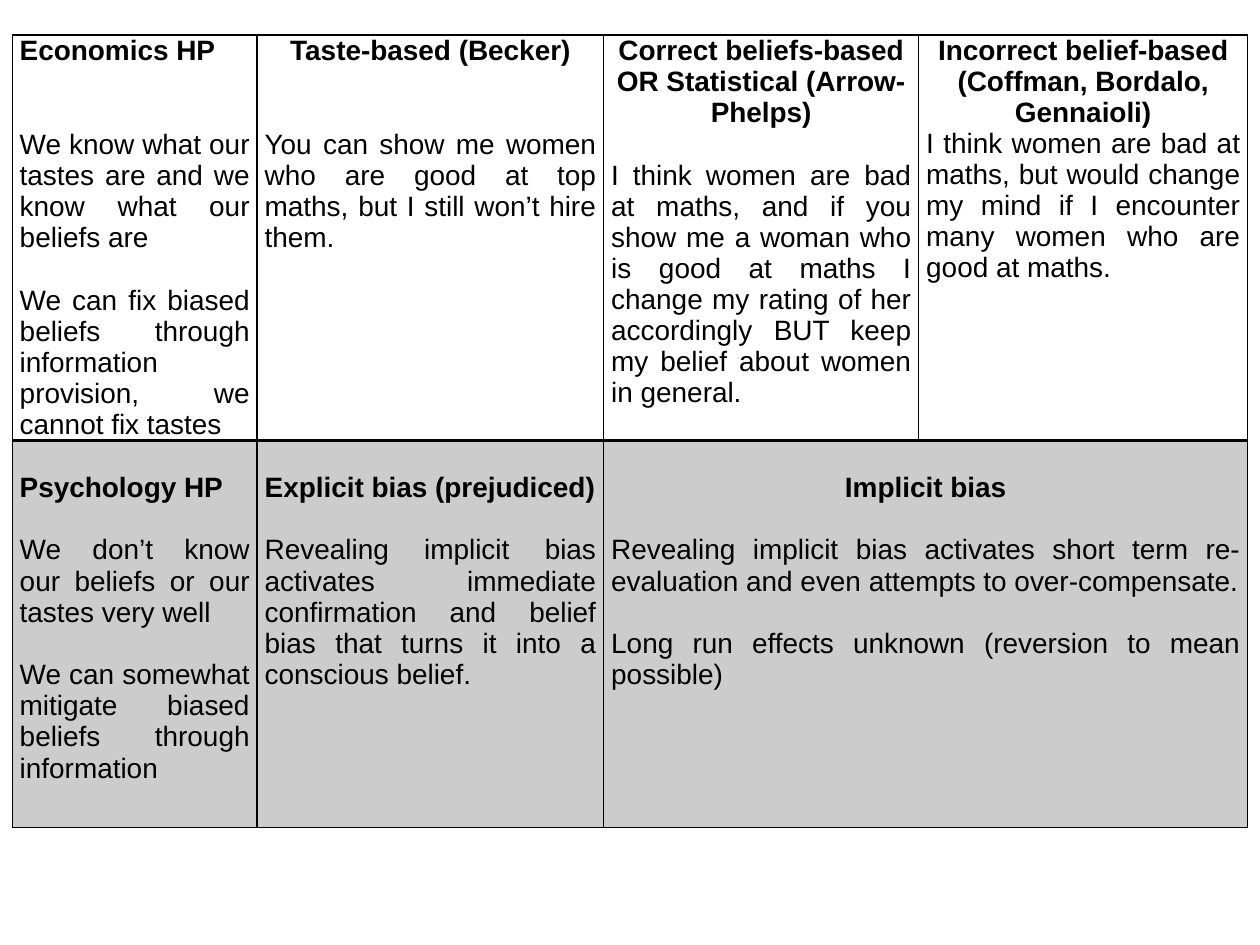
from dataclasses import dataclass

from lxml.etree import SubElement
from pptx import Presentation
from pptx.dml.color import RGBColor
from pptx.enum.text import PP_ALIGN as Align
from pptx.oxml import parse_xml
from pptx.oxml.ns import nsdecls, qn
from pptx.util import Pt


@dataclass(frozen=True)
class Theme:
    font: str = "Arial"
    size: int = 16
    line: int = 18
    ink: str = "000000"
    shade_percent: int = 20


@dataclass(frozen=True)
class Line:
    text: str
    blank_lines: int = 0
    bold: bool = False
    align: Align = Align.JUSTIFY


def heading(text, align=Align.CENTER):
    return Line(text, 0, True, align)


ECONOMICS = [
    [heading("Economics HP", Align.JUSTIFY),
     Line("We know what our tastes are and we know what our beliefs are", 2),
     Line("We can fix biased beliefs through information provision, "
          "we cannot fix tastes", 1)],
    [heading("Taste-based (Becker)"),
     Line("You can show me women who are good at top maths, "
          "but I still won’t hire them.", 2)],
    [heading("Correct beliefs-based OR Statistical (Arrow-Phelps)"),
     Line("I think women are bad at maths, and if you show me a woman who is "
          "good at maths I change my rating of her accordingly BUT keep my "
          "belief about women in general.", 1)],
    [heading("Incorrect belief-based"),
     heading("(Coffman, Bordalo, Gennaioli)"),
     Line("I think women are bad at maths, but would change my mind if I "
          "encounter many women who are good at maths.")],
]
PSYCHOLOGY = [
    [heading("Psychology HP", Align.JUSTIFY),
     Line("We don’t know our beliefs or our tastes very well", 1),
     Line("We can somewhat mitigate biased beliefs through information", 1)],
    [heading("Explicit bias (prejudiced)", Align.JUSTIFY),
     Line("Revealing implicit bias activates immediate confirmation and "
          "belief bias that turns it into a conscious belief.", 1)],
    [heading("Implicit bias"),
     Line("Revealing implicit bias activates short term re-evaluation and "
          "even attempts to over-compensate.", 1),
     Line("Long run effects unknown (reversion to mean possible)", 1)],
]


class SlideBuilder:
    """Hold the theme and current page, and add elements to it."""

    def __init__(self, page, theme):
        self.page = page
        self.theme = theme

    def table(self, left, top, widths, heights):
        frame = self.page.shapes.add_table(
            len(heights), len(widths), Pt(left), Pt(top),
            Pt(sum(widths)), Pt(sum(heights)))
        table = frame.table
        table.first_row = table.horz_banding = False
        for column, width in zip(table.columns, widths):
            column.width = Pt(width)
        for row, height in zip(table.rows, heights):
            row.height = Pt(height)
        return table

    def style_cell(self, cell, shaded, top_width, bottom_width):
        cell.margin_left = cell.margin_right = Pt(4.3)
        cell.margin_top = Pt(self.theme.line if shaded else 0)
        cell.margin_bottom = Pt(0)
        if shaded:
            cell.fill.solid()
            cell.fill.fore_color.rgb = RGBColor.from_string(self.theme.ink)
            color = next(cell._tc.tcPr.iter(qn("a:srgbClr")))
            SubElement(color, qn("a:alpha"),
                       val=str(self.theme.shade_percent * 1000))
        else:
            cell.fill.background()
        sides = {"lnL": 1, "lnR": 1, "lnT": top_width, "lnB": bottom_width}
        for index, (side, width) in enumerate(sides.items()):
            cell._tc.tcPr.insert(index, parse_xml(
                f'<a:{side} {nsdecls("a")} w="{Pt(width)}"><a:solidFill>'
                f'<a:srgbClr val="{self.theme.ink}"/></a:solidFill></a:{side}>'))

    def fill_text(self, cell, lines):
        frame = cell.text_frame
        for index, line in enumerate(lines):
            para = frame.add_paragraph() if index else frame.paragraphs[0]
            para.text = line.text
            para.alignment = line.align
            para.space_before = Pt(line.blank_lines * self.theme.line)
            para.font.name = self.theme.font
            para.font.size = Pt(self.theme.size)
            para.font.bold = line.bold
            para.font.color.rgb = RGBColor.from_string(self.theme.ink)


def main():
    deck = Presentation()
    deck.slide_width, deck.slide_height = Pt(720), Pt(540)
    page = deck.slides.add_slide(deck.slide_layouts[6])
    builder = SlideBuilder(page, Theme())
    table = builder.table(7, 20, [140, 198, 180, 188], [222, 221])
    for column in range(4):
        builder.style_cell(table.cell(0, column), False, 1, 2)
        builder.style_cell(table.cell(1, column), True, 2, 1)
    table.cell(1, 2).merge(table.cell(1, 3))
    for row, cells in enumerate([ECONOMICS, PSYCHOLOGY]):
        for column, lines in enumerate(cells):
            builder.fill_text(table.cell(row, column), lines)
    deck.save("out.pptx")


if __name__ == "__main__":
    main()
